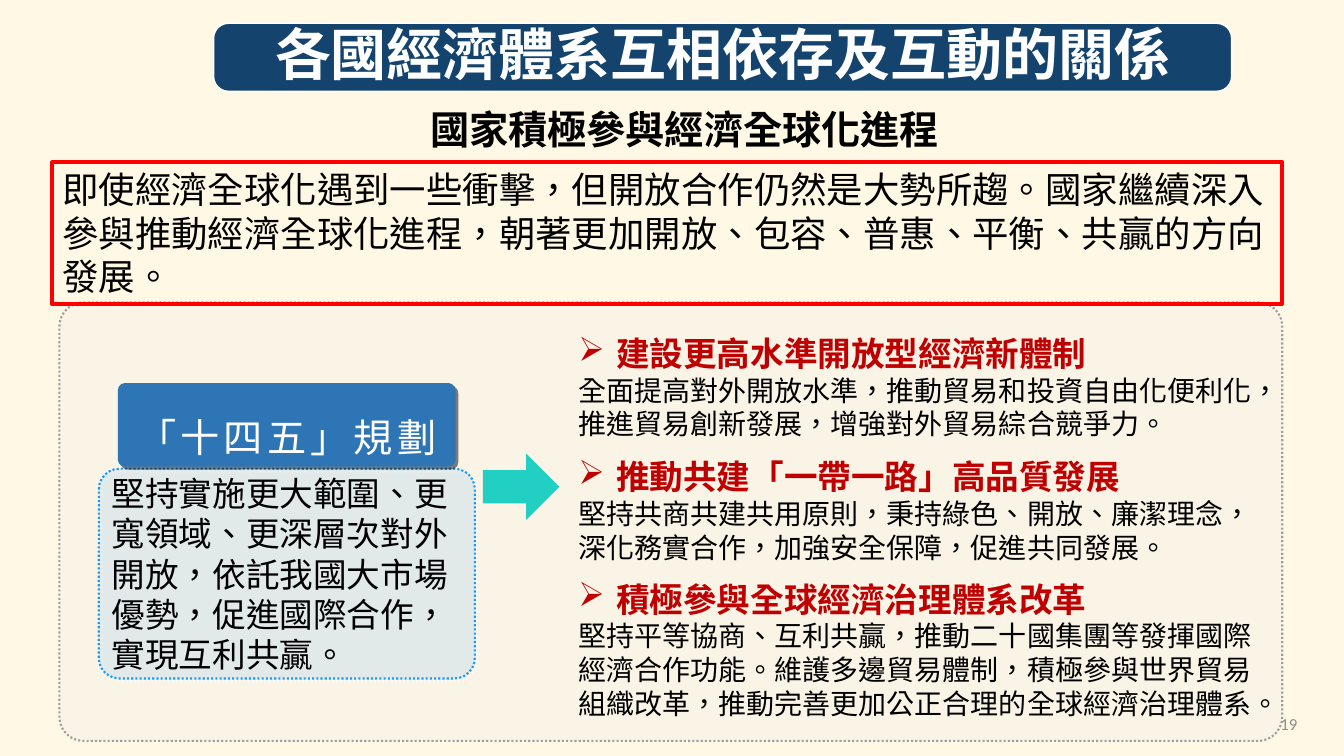
from lxml.etree import SubElement
from pptx import Presentation
from pptx.dml.color import RGBColor
from pptx.enum.dml import MSO_LINE
from pptx.enum.shapes import MSO_SHAPE
from pptx.enum.text import MSO_ANCHOR, PP_ALIGN
from pptx.oxml.ns import qn
from pptx.util import Pt

TITLE = "各國經濟體系互相依存及互動的關係"
SUBTITLE = "國家積極參與經濟全球化進程"
SUMMARY = (
    "即使經濟全球化遇到一些衝擊，但開放合作仍然是大勢所趨。國家繼續深入"
    "參與推動經濟全球化進程，朝著更加開放、包容、普惠、平衡、共贏的方向發展。"
)
PLAN_NAME = "「十四五」規劃"
PLAN_TEXT = (
    "堅持實施更大範圍、更寬領域、更深層次對外開放，"
    "依託我國大市場優勢，促進國際合作，實現互利共贏。"
)
PAGE_NUMBER = "19"
# top, height, heading, body
MEASURES = [
    (232.6, 87.1, "建設更高水準開放型經濟新體制",
     "全面提高對外開放水準，推動貿易和投資自由化便利化，"
     "推進貿易創新發展，增強對外貿易綜合競爭力。"),
    (313.9, 100.8, "推動共建「一帶一路」高品質發展",
     "堅持共商共建共用原則，秉持綠色、開放、廉潔理念，"
     "深化務實合作，加強安全保障，促進共同發展。"),
    (413.3, 100.8, "積極參與全球經濟治理體系改革",
     "堅持平等協商、互利共贏，推動二十國集團等發揮國際經濟合作功能。"
     "維護多邊貿易體制，積極參與世界貿易組織改革，"
     "推動完善更加公正合理的全球經濟治理體系。"),
]

CREAM = RGBColor(0xFF, 0xF8, 0xE5)
NAVY = RGBColor(0x14, 0x44, 0x6E)
BLUE = RGBColor(0x2E, 0x75, 0xB6)
SKY = RGBColor(0x13, 0x9A, 0xFF)
LAVENDER = RGBColor(0xCE, 0xD9, 0xFC)
TEAL = RGBColor(0x21, 0xD0, 0xC2)
RED = RGBColor(0xFF, 0x00, 0x00)
CRIMSON = RGBColor(0xC0, 0x00, 0x00)
GREY = RGBColor(0x9E, 0x9E, 0x9E)
NUMBER_GREY = RGBColor(0x8C, 0x8C, 0x8C)
BLACK = RGBColor(0x00, 0x00, 0x00)
WHITE = RGBColor(0xFF, 0xFF, 0xFF)

HALF, FAINT = "50000", "10000"
BULLET_INDENT = 27


def add_box(kind, left, top, width, height, fill=None, alpha=None, line=None,
            line_width=1.5, dotted=False, corner=None, shadow=None):
    """Add a preset shape; shadow is the colour of a half-transparent offset shadow."""
    shape = slide.shapes.add_shape(kind, Pt(left), Pt(top), Pt(width), Pt(height))
    if corner is not None:
        shape.adjustments[0] = corner
    if fill is None:
        shape.fill.background()
    else:
        shape.fill.solid()
        shape.fill.fore_color.rgb = fill
    if alpha:
        color = shape.element.spPr.find(qn("a:solidFill"))[0]
        SubElement(color, qn("a:alpha"), val=alpha)
    if line is None:
        shape.line.fill.background()
    else:
        shape.line.color.rgb = line
        shape.line.width = Pt(line_width)
        if dotted:
            shape.line.dash_style = MSO_LINE.ROUND_DOT
    shape.shadow.inherit = False
    if shadow is not None:
        effects = shape.element.spPr.find(qn("a:effectLst"))
        outer = SubElement(effects, qn("a:outerShdw"), blurRad="0",
                           dist=str(Pt(2.8)), dir="2700000", algn="ctr")
        color = SubElement(outer, qn("a:srgbClr"), val=str(shadow))
        SubElement(color, qn("a:alpha"), val=HALF)
    return shape


def add_text_box(left, top, width, height):
    return slide.shapes.add_textbox(Pt(left), Pt(top), Pt(width), Pt(height))


def write(shape, text, size, color=BLACK, font="Arial", bold=False,
          align=PP_ALIGN.LEFT, anchor=MSO_ANCHOR.MIDDLE, wrap=True,
          line_spacing=None, letter_spacing=None, bullet=None):
    """Write a paragraph into the shape, after any text already there."""
    frame = shape.text_frame
    frame.word_wrap = wrap
    frame.vertical_anchor = anchor
    paragraph = frame.add_paragraph() if frame.text else frame.paragraphs[0]
    paragraph.alignment = align
    if line_spacing:
        paragraph.line_spacing = line_spacing
    if bullet:
        properties = paragraph._p.get_or_add_pPr()
        properties.set("marL", str(Pt(BULLET_INDENT)))
        properties.set("indent", str(-Pt(BULLET_INDENT)))
        SubElement(properties, qn("a:buChar"), char=bullet)
    run = paragraph.add_run()
    run.text = text
    run.font.size = Pt(size)
    run.font.bold = bold
    run.font.name = font
    run.font.color.rgb = color
    properties = run._r.get_or_add_rPr()
    properties.set("lang", "zh-TW")
    if letter_spacing:
        properties.set("spc", str(letter_spacing * 100))
    SubElement(properties, qn("a:ea"), typeface=font)


presentation = Presentation()
presentation.slide_width = Pt(960)
presentation.slide_height = Pt(540)
slide = presentation.slides.add_slide(presentation.slide_layouts[6])
slide.background.fill.solid()
slide.background.fill.fore_color.rgb = CREAM

page_number = add_text_box(717.8, 502.6, 216, 28.8)
write(page_number, PAGE_NUMBER, 12, NUMBER_GREY, font="Calibri", align=PP_ALIGN.RIGHT)

add_box(MSO_SHAPE.ROUNDED_RECTANGLE, 42.5, 216, 873.4, 313.2, fill=LAVENDER,
        alpha=FAINT, line=GREY, dotted=True, corner=0.055)

for top, height, heading, body in MEASURES:
    measure = add_text_box(406, top, 509.8, height)
    write(measure, heading, 24, CRIMSON, bold=True, bullet="➢")
    write(measure, body, 20)

summary = add_box(MSO_SHAPE.RECTANGLE, 37.4, 115.9, 878.4, 101.5, line=RED, line_width=3)
write(summary, SUMMARY, 26, anchor=MSO_ANCHOR.TOP)

add_box(MSO_SHAPE.RIGHT_ARROW, 344.9, 324, 54.7, 47.5, fill=TEAL)

add_box(MSO_SHAPE.ROUNDED_RECTANGLE, 70.6, 334.8, 268.6, 149.8, fill=SKY,
        alpha=FAINT, line=SKY, dotted=True, corner=0.098, shadow=WHITE)
write(add_text_box(72.7, 333.4, 265, 152.6), PLAN_TEXT, 24)
plan_header = add_box(MSO_SHAPE.ROUNDED_RECTANGLE, 84.2, 273.6, 241.2, 59.8,
                      fill=BLUE, corner=0.086, shadow=BLACK)
write(plan_header, PLAN_NAME, 28, WHITE, font="Noto Sans CJK SC",
      align=PP_ALIGN.CENTER, wrap=False, line_spacing=1.5, letter_spacing=3)

write(add_text_box(171.4, 75.6, 635, 40.3), SUBTITLE, 28, bold=True,
      align=PP_ALIGN.CENTER, anchor=MSO_ANCHOR.TOP, line_spacing=0.9)

title = add_box(MSO_SHAPE.ROUNDED_RECTANGLE, 152.6, 16.6, 727.2, 48.6, fill=NAVY,
                line=WHITE, line_width=1, corner=0.22)
title.text_frame.margin_left = title.text_frame.margin_right = Pt(19.4)
title.text_frame.margin_top = title.text_frame.margin_bottom = Pt(2.2)
write(title, TITLE, 40, WHITE, bold=True, align=PP_ALIGN.CENTER, line_spacing=0.9)

presentation.save("out.pptx")
